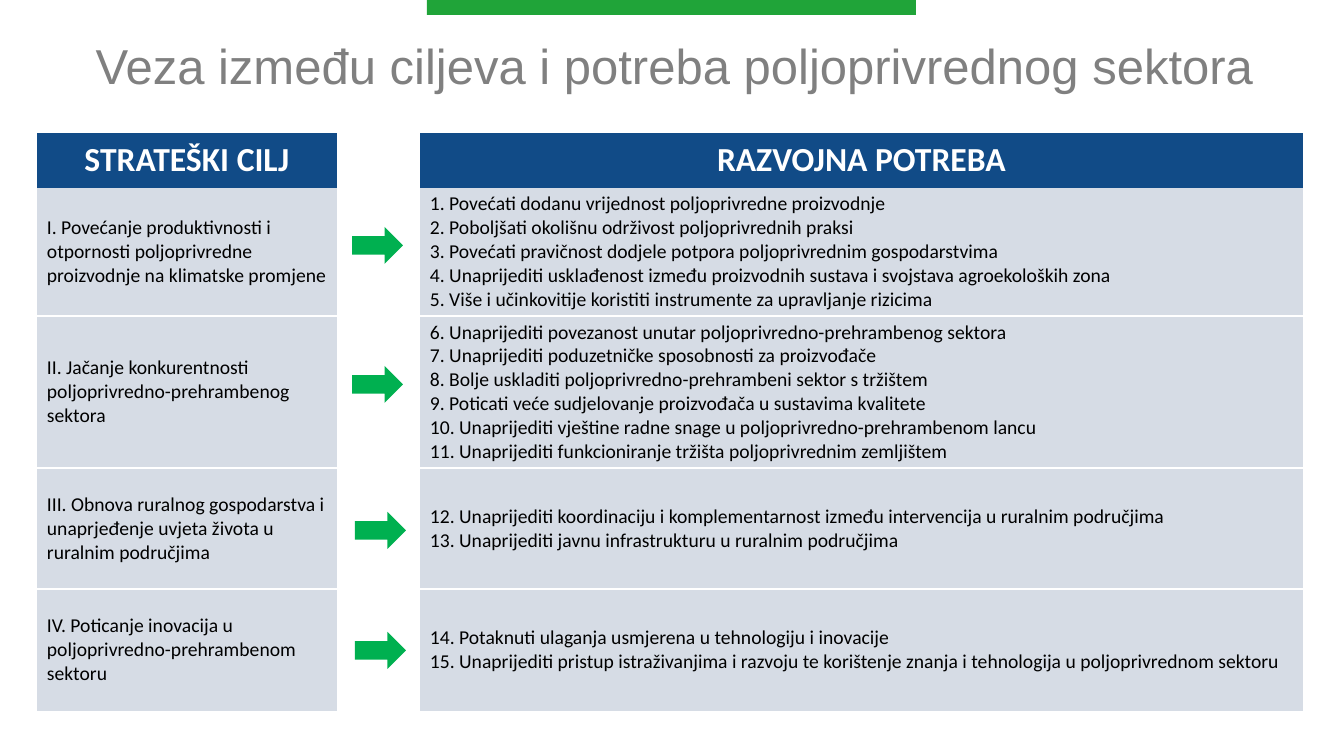
from lxml import etree
from pptx import Presentation
from pptx.dml.color import RGBColor
from pptx.enum.shapes import MSO_SHAPE
from pptx.enum.text import MSO_ANCHOR, PP_ALIGN
from pptx.oxml.ns import qn
from pptx.util import Pt

RECTANGLE, RIGHT_ARROW = MSO_SHAPE.RECTANGLE, MSO_SHAPE.RIGHT_ARROW
TOP, MIDDLE = MSO_ANCHOR.TOP, MSO_ANCHOR.MIDDLE
LEFT, CENTER = PP_ALIGN.LEFT, PP_ALIGN.CENTER

WHITE = RGBColor(0xFF, 0xFF, 0xFF)
BLACK = RGBColor(0x00, 0x00, 0x00)
GREY = RGBColor(0x80, 0x80, 0x80)
NAVY = RGBColor(0x11, 0x4B, 0x87)
PALE_BLUE = RGBColor(0xD6, 0xDC, 0xE5)
BAR_GREEN = RGBColor(0x20, 0xA4, 0x39)
ARROW_GREEN = RGBColor(0x00, 0xB0, 0x50)

EMU_PER_PX = 914400 / 100.8
PLAIN_TABLE_STYLE = "{2D5ABB26-0587-4C30-8999-92F81FD0307C}"

TITLE_FONT = {"name": "Arial", "size": Pt(35), "color": GREY}
HEADER_FONT = {"name": "Calibri", "size": Pt(24), "bold": True, "color": WHITE}
BODY_FONT = {"name": "Calibri", "size": Pt(14), "bold": False, "color": BLACK}

TITLE = "Veza između ciljeva i potreba poljoprivrednog sektora"
HEADERS = ("STRATEŠKI CILJ", "RAZVOJNA POTREBA")
GOALS = [
    ("I. Povećanje produktivnosti i otpornosti poljoprivredne proizvodnje na klimatske promjene",
     ["1. Povećati dodanu vrijednost poljoprivredne proizvodnje",
      "2. Poboljšati okolišnu održivost poljoprivrednih praksi",
      "3. Povećati pravičnost dodjele potpora poljoprivrednim gospodarstvima",
      "4. Unaprijediti usklađenost između proizvodnih sustava i svojstava agroekoloških zona",
      "5. Više i učinkovitije koristiti instrumente za upravljanje rizicima"]),
    ("II. Jačanje konkurentnosti poljoprivredno-prehrambenog sektora",
     ["6. Unaprijediti povezanost unutar poljoprivredno-prehrambenog sektora",
      "7. Unaprijediti poduzetničke sposobnosti za proizvođače",
      "8. Bolje uskladiti poljoprivredno-prehrambeni sektor s tržištem",
      "9. Poticati veće sudjelovanje proizvođača u sustavima kvalitete",
      "10. Unaprijediti vještine radne snage u poljoprivredno-prehrambenom lancu",
      "11. Unaprijediti funkcioniranje tržišta poljoprivrednim zemljištem"]),
    ("III. Obnova ruralnog gospodarstva i unaprjeđenje uvjeta života u ruralnim područjima",
     ["12. Unaprijediti koordinaciju i komplementarnost između intervencija u ruralnim područjima",
      "13. Unaprijediti javnu infrastrukturu u ruralnim područjima"]),
    ("IV. Poticanje inovacija u poljoprivredno-prehrambenom sektoru",
     ["14. Potaknuti ulaganja usmjerena u tehnologiju i inovacije",
      "15. Unaprijediti pristup istraživanjima i razvoju te korištenje znanja i tehnologija "
      "u poljoprivrednom sektoru"]),
]
COLUMN_WIDTHS = (300, 83, 883)
ROW_HEIGHTS = (55, 128, 152, 121, 122)
ARROW_PLACES = ((352, 227), (352, 366), (355, 512), (355, 632))


def px(length):
    return round(length * EMU_PER_PX)


class SlideBuilder:
    """Draws elements on one page, with lengths in px."""

    def __init__(self, deck):
        self.page = deck.slides.add_slide(deck.slide_layouts[6])

    def add_lines(self, frame, lines, font, align):
        for index, line in enumerate(lines):
            para = frame.paragraphs[0] if index == 0 else frame.add_paragraph()
            para.alignment = align
            span = para.add_run()
            span.text = line
            for name, value in font.items():
                if name == "color":
                    span.font.color.rgb = value
                else:
                    setattr(span.font, name, value)

    def shape(self, kind, place, color):
        shape = self.page.shapes.add_shape(kind, *map(px, place))
        shape.shadow.inherit = False
        shape.fill.solid()
        shape.fill.fore_color.rgb = color
        shape.line.fill.background()

    def title(self, text, place):
        box = self.page.shapes.add_textbox(*map(px, place))
        frame = box.text_frame
        layout = {"word_wrap": True, "vertical_anchor": TOP,
                  "margin_top": 0, "margin_bottom": 0}
        for name, value in layout.items():
            setattr(frame, name, value)
        self.add_lines(frame, [text], TITLE_FONT, CENTER)
        frame.paragraphs[0].line_spacing = 0.8

    def table(self, left, top, widths, heights):
        place = (left, top, sum(widths), sum(heights))
        table = self.page.shapes.add_table(len(heights), len(widths), *map(px, place)).table
        table.first_row = table.horz_banding = False
        table._tbl.tblPr.find(qn("a:tableStyleId")).text = PLAIN_TABLE_STYLE
        for column, width in zip(table.columns, widths):
            column.width = px(width)
        for row, height in zip(table.rows, heights):
            row.height = px(height)
        return table

    def cell(self, cell, lines, font, align, color, edges=()):
        """Fill a cell with text and rule white lines on the given edges."""
        layout = {"vertical_anchor": MIDDLE, "margin_left": px(10), "margin_right": px(10),
                  "margin_top": px(4), "margin_bottom": px(4)}
        for name, value in layout.items():
            setattr(cell, name, value)
        for edge in edges:
            line = etree.SubElement(cell._tc.get_or_add_tcPr(), qn(f"a:ln{edge}"), w=str(Pt(1)))
            fill = etree.SubElement(line, qn("a:solidFill"))
            etree.SubElement(fill, qn("a:srgbClr"), val=str(WHITE))
        cell.fill.solid()
        cell.fill.fore_color.rgb = color
        self.add_lines(cell.text_frame, lines, font, align)


def main():
    deck = Presentation()
    deck.slide_width, deck.slide_height = px(1344), px(756)
    slide = SlideBuilder(deck)
    slide.shape(RECTANGLE, (427, 0, 489, 15), BAR_GREEN)

    table = slide.table(37, 133, COLUMN_WIDTHS, ROW_HEIGHTS)
    for column, header in zip((0, 2), HEADERS):
        slide.cell(table.cell(0, column), [header], HEADER_FONT, CENTER, NAVY)
    for row, (goal, needs) in enumerate(GOALS, start=1):
        edges = ("T" if row > 1 else "") + ("B" if row < len(GOALS) else "")
        for column, lines in ((0, [goal]), (2, needs)):
            slide.cell(table.cell(row, column), lines, BODY_FONT, LEFT, PALE_BLUE, edges)
    for row in range(len(ROW_HEIGHTS)):
        table.cell(row, 1).fill.background()

    for left, top in ARROW_PLACES:
        slide.shape(RIGHT_ARROW, (left, top, 51, 37), ARROW_GREEN)
    slide.title(TITLE, (82, 47, 1186, 59))
    deck.save("out.pptx")


if __name__ == "__main__":
    main()
